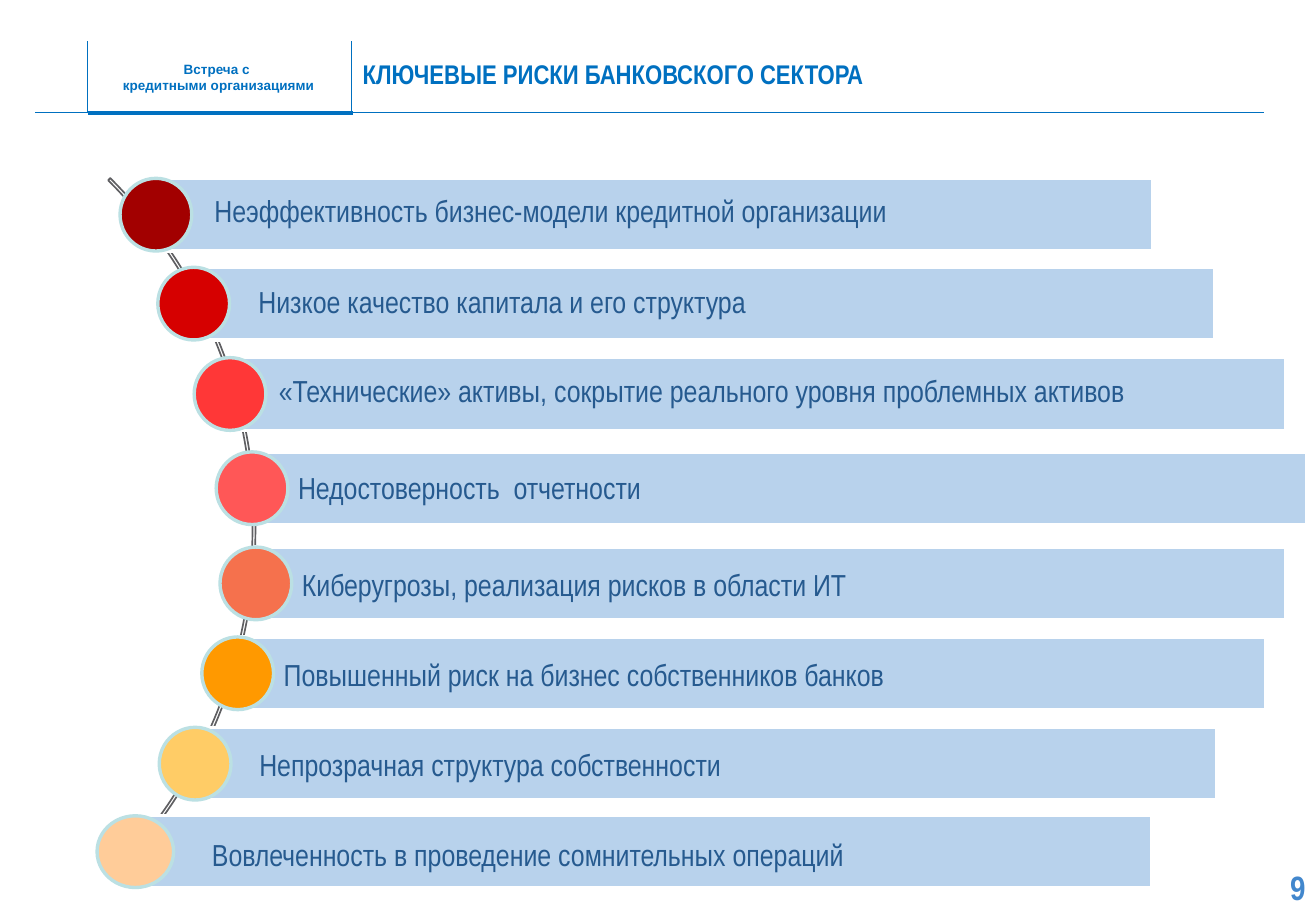
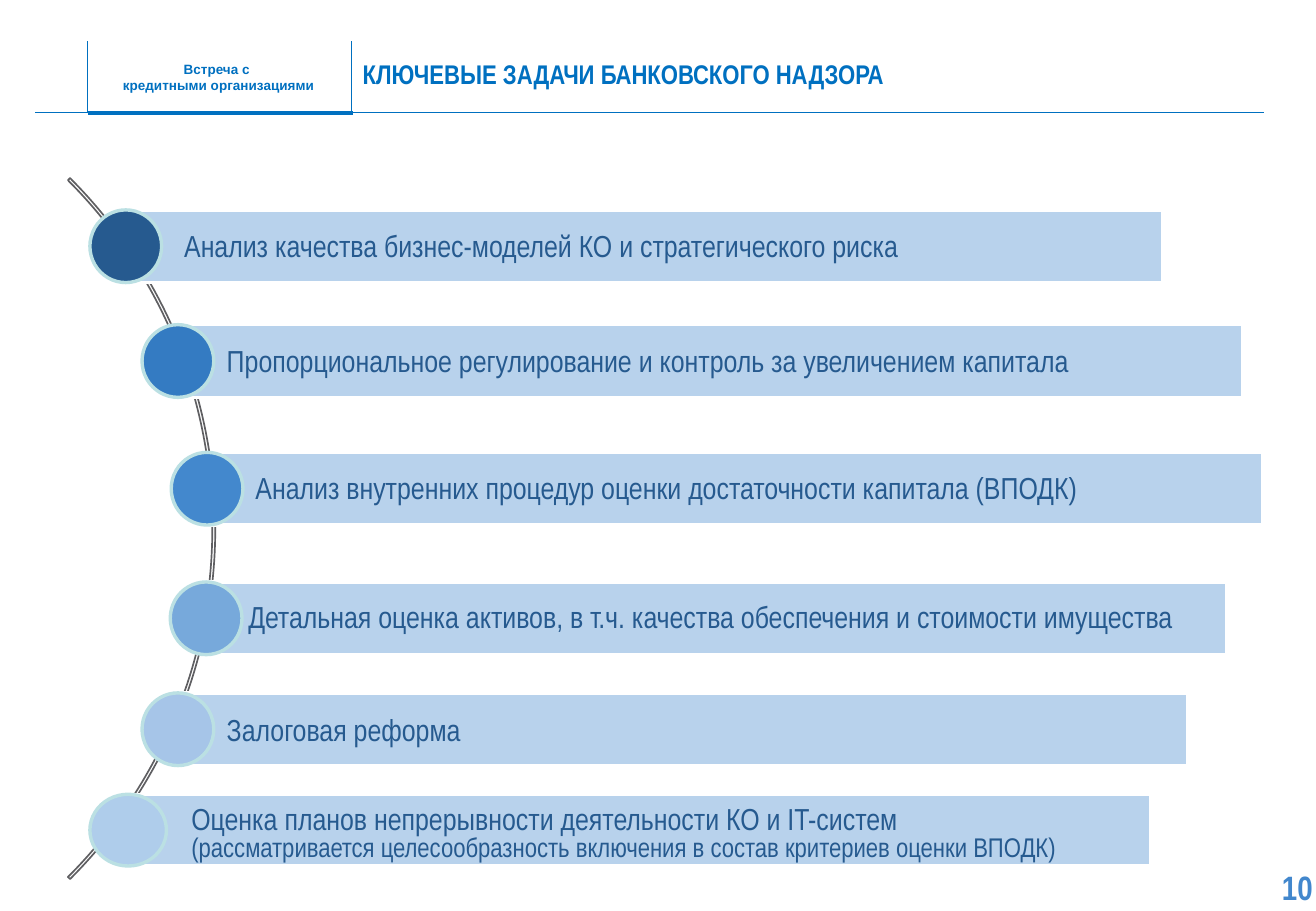
from dataclasses import dataclass

from lxml import etree
from pptx import Presentation
from pptx.dml.color import RGBColor
from pptx.enum import shapes, text
from pptx.oxml import ns
from pptx.util import Cm, Pt

# Shared style
BLUE = RGBColor(0x00, 0x70, 0xC0)
NUMBER_BLUE = RGBColor(0x42, 0x87, 0xCD)
LABEL_BLUE = RGBColor(0x26, 0x5A, 0x8F)
BAR_FILL = RGBColor(0xB8, 0xD2, 0xEC)
RING = RGBColor(0xBB, 0xE0, 0xE3)
ARC_GREY = RGBColor(0x5F, 0x5F, 0x62)
WHITE = RGBColor(0xFF, 0xFF, 0xFF)
SANS, NARROW = "Arial", "Arial Narrow"

ROW_HEIGHT = 1.52
CIRCLE_WIDTH = 1.5
BAR_OFFSET = 0.72
LABEL_HEIGHT = 0.94
ARC_SIZE = 20.73
ARC_TOP = 0.69
HEADER_TEXT = "Встреча с \nкредитными организациями"


@dataclass(frozen=True)
class HeaderLine:
    x1: float
    y1: float
    x2: float
    y2: float
    points: float = 0.25


@dataclass(frozen=True)
class Row:
    """One bar with its circle and label; lengths in centimetres."""
    wording: str
    colour: RGBColor
    circle_left: float
    top: float
    bar_right: float
    label_left: float
    label_top: float
    label_width: float = 20.37
    inset: float = 0.25
    circle_width: float = CIRCLE_WIDTH
    height: float = ROW_HEIGHT
    line_spacing: float = 1.0


@dataclass(frozen=True)
class Page:
    title: str
    number: str
    number_left: float
    arc_left: float
    rows: tuple[Row, ...]


HEADER_LINES = (
    HeaderLine(1.83, 2.34, 0.74, 2.34),
    HeaderLine(7.37, 2.36, 1.83, 2.36, 2.25),
    HeaderLine(26.42, 2.34, 7.32, 2.34),
    HeaderLine(1.83, 2.36, 1.83, 0.86),
    HeaderLine(7.34, 2.36, 7.34, 0.86),
)

RISKS = Page("КЛЮЧЕВЫЕ РИСКИ БАНКОВСКОГО СЕКТОРА", "9", 26.97, -15.39, (
    Row("Неэффективность бизнес-модели кредитной организации",
        RGBColor(0xA2, 0x00, 0x00), 2.51, 3.73, 24.1, 4.34, 3.94, 21.49, inset=0.1),
    Row("Низкое качество капитала и его структура",
        RGBColor(0xD6, 0x00, 0x00), 3.3, 5.59, 25.4, 5.11, 5.84, 18.75),
    Row("«Технические» активы, сокрытие реального уровня проблемных активов",
        RGBColor(0xFF, 0x37, 0x37), 4.06, 7.48, 26.87, 5.54, 7.7, 21.13),
    Row("Недостоверность  отчетности",
        RGBColor(0xFF, 0x57, 0x57), 4.52, 9.45, 27.31, 5.94, 9.73),
    Row("Киберугрозы, реализация рисков в области ИТ",
        RGBColor(0xF5, 0x71, 0x4D), 4.6, 11.44, 26.87, 6.02, 11.76),
    Row("Повышенный риск на бизнес собственников банков",
        RGBColor(0xFF, 0x99, 0x00), 4.22, 13.32, 26.47, 5.64, 13.64),
    Row("Непрозрачная структура собственности",
        RGBColor(0xFF, 0xCC, 0x66), 3.33, 15.21, 25.43, 5.13, 15.52),
    Row("Вовлеченность в проведение сомнительных операций",
        RGBColor(0xFF, 0xCC, 0x99), 2.03, 17.06, 24.08, 4.14, 17.4,
        circle_width=1.6, height=1.5),
))

TASKS = Page("КЛЮЧЕВЫЕ ЗАДАЧИ БАНКОВСКОГО НАДЗОРА", "10", 26.8, -16.23, (
    Row("Анализ качества бизнес-моделей КО и стратегического риска",
        RGBColor(0x26, 0x5A, 0x8F), 1.88, 4.39, 24.31, 3.56, 4.67, 18.34),
    Row("Пропорциональное регулирование и контроль за увеличением капитала",
        RGBColor(0x34, 0x7B, 0xC2), 2.97, 6.79, 25.98, 4.45, 7.06),
    Row("Анализ внутренних процедур оценки достаточности капитала (ВПОДК)",
        RGBColor(0x43, 0x88, 0xCD), 3.58, 9.46, 26.39, 5.05, 9.73),
    Row("Детальная оценка активов, в т.ч. качества обеспечения и стоимости имущества",
        RGBColor(0x77, 0xA9, 0xDB), 3.56, 12.17, 25.65, 5.05, 12.42, 21.49, inset=0.1),
    Row("Залоговая реформа",
        RGBColor(0xA6, 0xC5, 0xE8), 2.97, 14.49, 24.82, 4.45, 14.78),
    Row("Оценка планов непрерывности деятельности КО и IT-систем \n"
        "(рассматривается целесообразность включения в состав критериев оценки ВПОДК)",
        RGBColor(0xAF, 0xCD, 0xEB), 1.88, 16.61, 24.05, 3.71, 16.99,
        circle_width=1.6, height=1.5, line_spacing=0.8),
))


def write(shape, wording: str, font_name: str, sizes: tuple[float, ...],
          colour: RGBColor, bold: bool = True, inset_x: float = 0, inset_y: float = 0,
          alignment=text.PP_ALIGN.LEFT):
    """Fill a shape with one paragraph; sizes go to its lines in turn."""
    frame = shape.text_frame
    frame.word_wrap = True
    frame.vertical_anchor = text.MSO_ANCHOR.MIDDLE
    frame.margin_left = frame.margin_right = Cm(inset_x)
    frame.margin_top = frame.margin_bottom = Cm(inset_y)
    paragraph = frame.paragraphs[0]
    paragraph.text = wording
    paragraph.alignment = alignment
    for index, run in enumerate(paragraph.runs):
        run.font.name = font_name
        run.font.size = Pt(sizes[min(index, len(sizes) - 1)])
        run.font.bold = bold
        run.font.color.rgb = colour
    return paragraph


def add_text(slide, left: float, top: float, width: float, height: float):
    return slide.shapes.add_textbox(Cm(left), Cm(top), Cm(width), Cm(height))


def add_outline(slide, kind, left: float, top: float, width: float, height: float,
                fill: RGBColor | None = None, line: RGBColor | None = None,
                points: float = 2):
    shape = slide.shapes.add_shape(kind, Cm(left), Cm(top), Cm(width), Cm(height))
    shape.shadow.inherit = False
    if fill is None:
        shape.fill.background()
    else:
        shape.fill.solid()
        shape.fill.fore_color.rgb = fill
    if line is None:
        shape.line.fill.background()
    else:
        shape.line.color.rgb = line
        shape.line.width = Pt(points)
    return shape


def add_header(slide, page: Page) -> None:
    for line in HEADER_LINES:
        connector = slide.shapes.add_connector(
            shapes.MSO_CONNECTOR.STRAIGHT,
            Cm(line.x1), Cm(line.y1), Cm(line.x2), Cm(line.y2))
        connector.line.color.rgb = BLUE
        connector.line.width = Pt(line.points)
        etree.SubElement(connector._element.spPr, ns.qn("a:effectLst"))
    write(add_text(slide, 1.88, 1.27, 5.38, 0.69), HEADER_TEXT, SANS, (8,), BLUE,
          alignment=text.PP_ALIGN.CENTER)
    title = write(add_text(slide, 7.58, 0.86, 18.67, 1.45), page.title, NARROW, (16,), BLUE)
    title.line_spacing = 0.9
    title.space_before = Pt(8.8)
    write(add_text(slide, page.number_left, 18.03, 27.51 - page.number_left, 1.02),
          page.number, NARROW, (20,), NUMBER_BLUE)


def add_arc(slide, left: float) -> None:
    arc = add_outline(slide, shapes.MSO_SHAPE.BLOCK_ARC, left, ARC_TOP,
                      ARC_SIZE, ARC_SIZE, line=ARC_GREY, points=1)
    for index, value in enumerate((189, 27, 0.003)):
        arc.adjustments[index] = value


def add_row(slide, row: Row) -> None:
    bar_left = row.circle_left + BAR_OFFSET
    add_outline(slide, shapes.MSO_SHAPE.RECTANGLE, bar_left, row.top,
                row.bar_right - bar_left, row.height, BAR_FILL, WHITE)
    add_outline(slide, shapes.MSO_SHAPE.OVAL, row.circle_left, row.top,
                row.circle_width, row.height, row.colour, RING)
    label = add_outline(slide, shapes.MSO_SHAPE.ROUNDED_RECTANGLE, row.label_left,
                        row.label_top, row.label_width, LABEL_HEIGHT)
    label.adjustments[0] = 0.15
    paragraph = write(label, row.wording, NARROW, (18, 16), LABEL_BLUE, bold=False,
                      inset_x=row.inset, inset_y=0.13)
    paragraph.line_spacing = row.line_spacing


def main() -> None:
    presentation = Presentation()
    presentation.slide_width = Cm(27.51)
    presentation.slide_height = Cm(19.05)
    for page in (RISKS, TASKS):
        slide = presentation.slides.add_slide(presentation.slide_layouts[6])
        add_header(slide, page)
        add_arc(slide, page.arc_left)
        for row in page.rows:
            add_row(slide, row)
    presentation.save("out.pptx")


if __name__ == "__main__":
    main()
